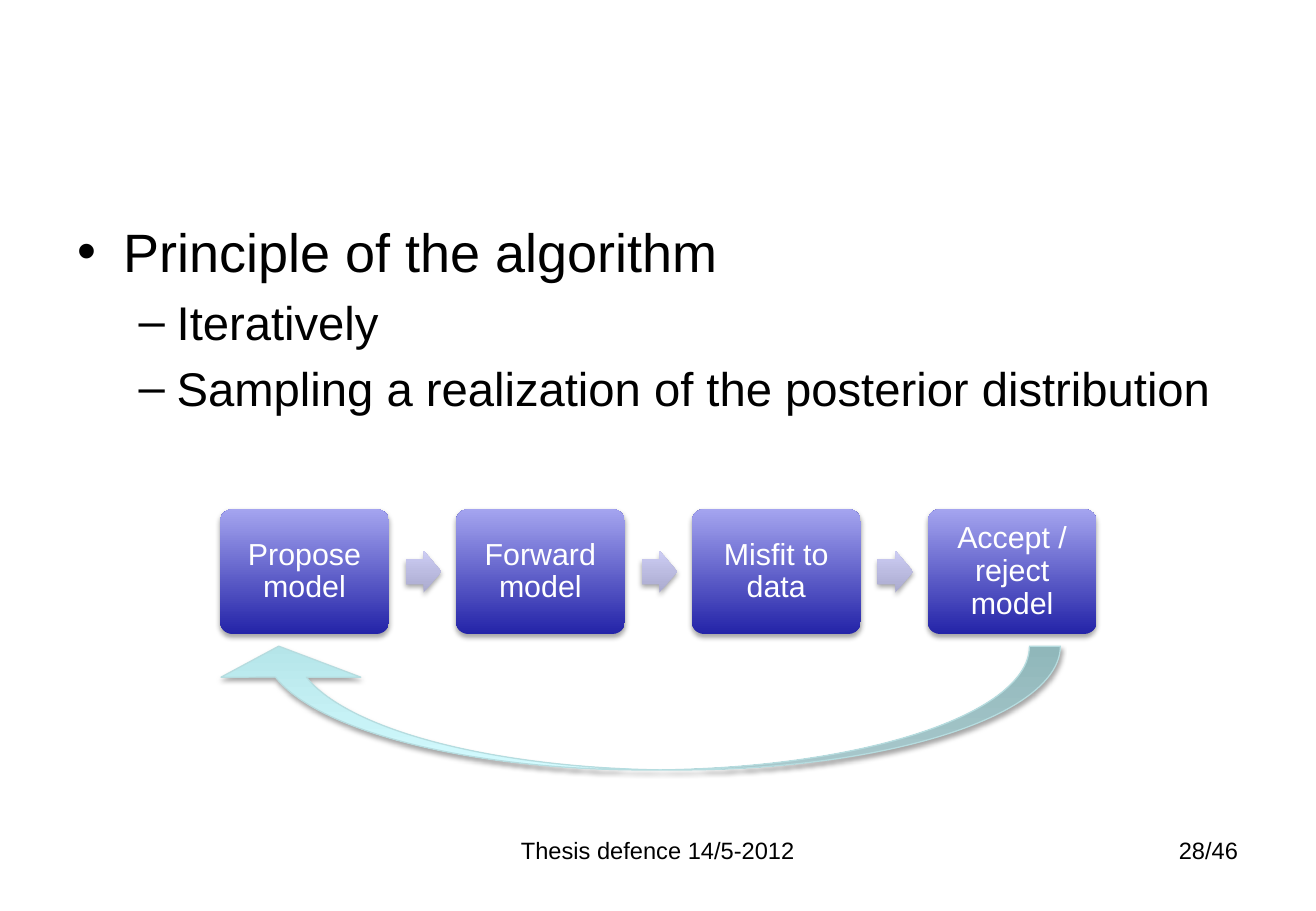
from lxml import etree
from pptx import Presentation
from pptx.dml.color import RGBColor
from pptx.enum import shapes, text
from pptx.oxml import ns
from pptx.util import Pt


def paint(font, size, tone):
    font.name = "Arial"
    font.size = Pt(size)
    font.color.rgb = RGBColor.from_string(tone)


def block(kind, left, top, width, height, adjust, tones):
    item = slide.shapes.add_shape(kind, Pt(left), Pt(top), Pt(width), Pt(height))
    for i, value in enumerate(adjust):
        item.adjustments[i] = value
    item.fill.gradient()
    item.fill.gradient_angle = 90
    for stop, tone, place in zip(item.fill.gradient_stops, tones, (0, 1)):
        stop.color.rgb = RGBColor.from_string(tone)
        stop.position = place
    item.line.fill.background()
    item.shadow.inherit = False
    effects = item._element.spPr.find(ns.qn("a:effectLst"))
    shade = etree.SubElement(effects, ns.qn("a:outerShdw"), blurRad=str(Pt(3.1)),
                             dist=str(Pt(1.8)), dir="5400000", rotWithShape="0")
    black = etree.SubElement(shade, ns.qn("a:srgbClr"), val="000000")
    etree.SubElement(black, ns.qn("a:alpha"), val="35000")
    return item


deck = Presentation()
deck.slide_width, deck.slide_height = Pt(780), Pt(540)
slide = deck.slides.add_slide(deck.slide_layouts[1])
title = slide.shapes.title._element
title.getparent().remove(title)

body = slide.placeholders[1]
body.left, body.top, body.width, body.height = Pt(39), Pt(126), Pt(702), Pt(356.4)
frame = body.text_frame
frame.text = "Principle of the algorithm\nIteratively\nSampling a realization of the posterior distribution"
frame.auto_size = text.MSO_AUTO_SIZE.NONE
for line, level, size in zip(frame.paragraphs, (0, 1, 1), (32, 28, 28)):
    line.level = level
    paint(line.runs[0].font, size, "000000")

steps = ["Propose model", "Forward model", "Misfit to data", "Accept / reject model"]
pitch = 139.8
for i, step in enumerate(steps):
    left = 130.4 + i * pitch
    box = block(shapes.MSO_SHAPE.ROUNDED_RECTANGLE, left, 301.8, 100.2, 74,
                [0.1], ("2424A8", "A4A4EF"))
    frame = box.text_frame
    frame.text = step
    frame.word_wrap = True
    frame.vertical_anchor = text.MSO_ANCHOR.MIDDLE
    frame.margin_left = frame.margin_right = Pt(5)
    frame.margin_top = frame.margin_bottom = Pt(5)
    line = frame.paragraphs[0]
    line.alignment = text.PP_ALIGN.CENTER
    line.line_spacing = 0.9
    paint(line.runs[0].font, 18, "FFFFFF")
    if i < len(steps) - 1:
        block(shapes.MSO_SHAPE.RIGHT_ARROW, left + 110.1, 326.4, 21.2, 24.8,
              [0.6, 0.5], ("AAAACE", "CDCDF4"))

loop = block(shapes.MSO_SHAPE.CURVED_DOWN_ARROW, 123.8, 383, 504.7, 73.4,
             [0.25, 1.128, 0.25], ("B5E5E9", "D3FBFF"))
loop.rotation = 180
loop.line.color.rgb = RGBColor.from_string("B6DCDF")
loop.line.width = Pt(0.75)

for words, left, width, align in [
    ("28/46", 558.7, 182.2, text.PP_ALIGN.RIGHT),
    ("Thesis defence 14/5-2012", 266.4, 247, text.PP_ALIGN.CENTER),
]:
    note = slide.shapes.add_textbox(Pt(left), Pt(491.8), Pt(width), Pt(37.4))
    note.text_frame.word_wrap = True
    line = note.text_frame.paragraphs[0]
    line.text = words
    line.alignment = align
    paint(line.runs[0].font, 14, "000000")

deck.save("out.pptx")
